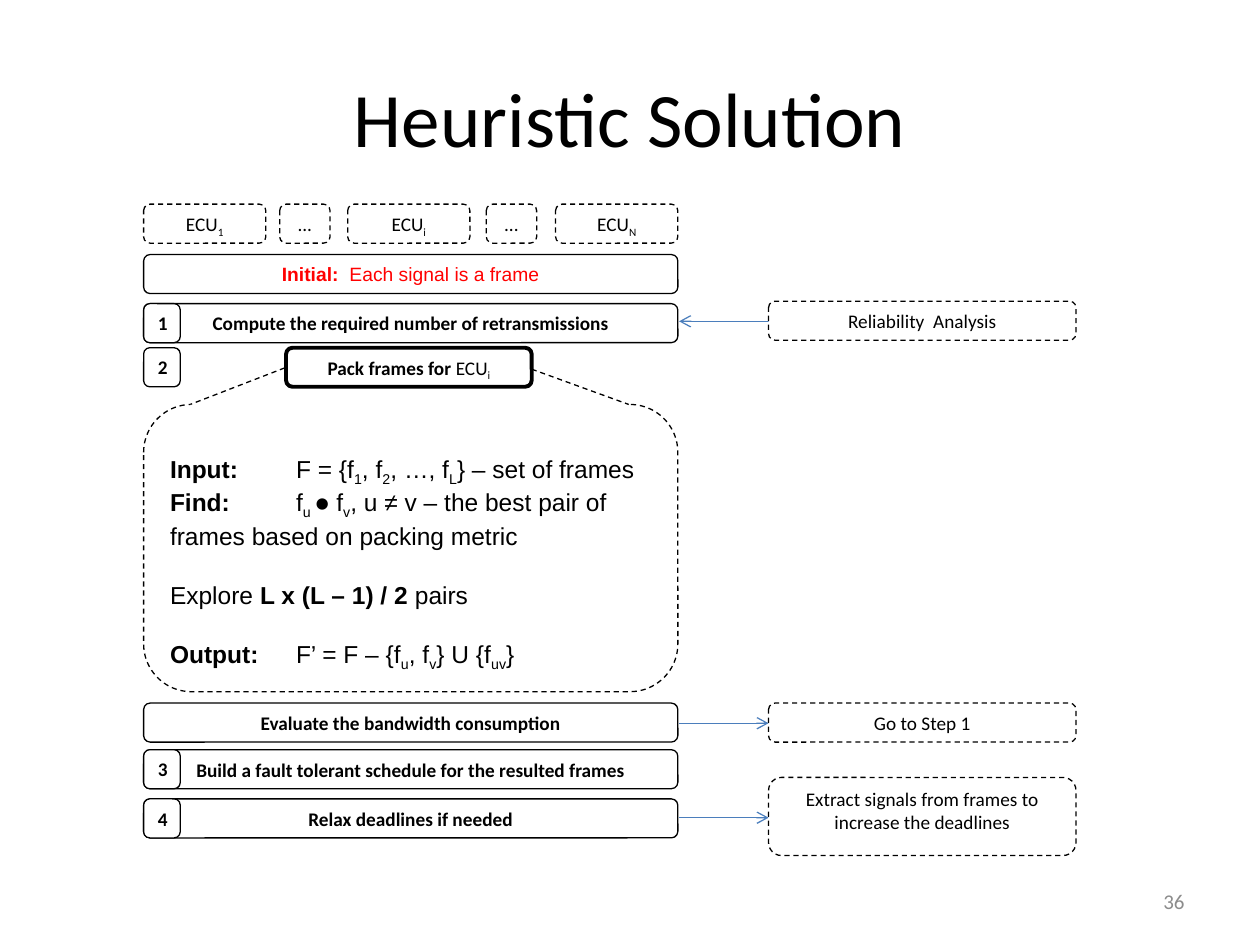
from lxml import etree
from pptx import Presentation
from pptx.dml.color import RGBColor
from pptx.enum.dml import MSO_LINE
from pptx.enum.shapes import MSO_CONNECTOR, MSO_SHAPE
from pptx.enum.text import MSO_ANCHOR, PP_ALIGN
from pptx.oxml.ns import qn
from pptx.util import Inches, Pt

ROUND = MSO_SHAPE.ROUNDED_RECTANGLE
RECT = MSO_SHAPE.RECTANGLE
LINE = MSO_CONNECTOR.STRAIGHT
DASH = MSO_LINE.DASH
TOP, MIDDLE = MSO_ANCHOR.TOP, MSO_ANCHOR.MIDDLE
LEFT, CENTER, RIGHT = PP_ALIGN.LEFT, PP_ALIGN.CENTER, PP_ALIGN.RIGHT
rgb = RGBColor.from_string

deck = Presentation()
deck.slide_width, deck.slide_height = Inches(10), Inches(7.5)
slide = deck.slides.add_slide(deck.slide_layouts[6])
shapes = slide.shapes


def write(frame, lines, size=11, font="Calibri", color="000000", align=CENTER, anchor=TOP):
    frame.word_wrap = True
    frame.vertical_anchor = anchor
    for i, line in enumerate(lines):
        para = frame.paragraphs[0] if i == 0 else frame.add_paragraph()
        para.alignment = align
        for j, chunk in enumerate(line.split("*")):
            for k, part in enumerate(chunk.split("_")):
                if not part:
                    continue
                run = para.add_run()
                run.text = part
                run.font.size = Pt(size)
                run.font.name = "Calibri" if part == "●" else font
                run.font.bold = j % 2 == 1
                run.font.color.rgb = rgb(color)
                if k % 2:
                    run._r.get_or_add_rPr().set("baseline", "-25000")


def box(x, y, w, h=0.31, dash=False, kind=ROUND, line="000000", width=0.75):
    shape = shapes.add_shape(kind, Inches(x), Inches(y), Inches(w), Inches(h))
    shape.shadow.inherit = False
    shape.fill.solid()
    shape.fill.fore_color.rgb = rgb("FFFFFF")
    shape.line.color.rgb = rgb(line)
    shape.line.width = Pt(width)
    if dash:
        shape.line.dash_style = DASH
    return shape


left, wide, side, span = 1.14, 4.24, 6.1, 2.44

labels = [
    (0.5, 0.3, 9, 1.25, "Heuristic Solution", 44, "000000", CENTER),
    (7.17, 6.95, 2.33, 0.4, "36", 12, "8C8C8C", RIGHT),
]
for x, y, w, h, text, size, color, align in labels:
    label = shapes.add_textbox(Inches(x), Inches(y), Inches(w), Inches(h))
    write(label.text_frame, [text], size, color=color, align=align, anchor=MIDDLE)

detail = box(left, 3.21, wide, 2.28, dash=True).text_frame
detail.margin_top = Inches(0.28)
write(detail, [
    "*Input:\t*F = {f_1_, f_2_, …, f_L_} – set of frames",
    "*Find: \t*f_u _●__ f_v_, u ≠ v – the best pair of frames based on packing metric",
    "Explore* L x (L – 1) / 2* pairs",
    "*Output:*\tF’ = F – {f_u_, f_v_} U {f_uv_}",
], 14, "Arial", align=LEFT)
for para in detail.paragraphs[2:]:
    para.space_before = Pt(17)
box(1.51, 3.16, 3.48, 0.1, kind=RECT, line="FFFFFF")

units = [(1.14, 0.97, "ECU_1_"), (2.22, 0.4, "..."), (2.76, 0.97, "ECU_i_"),
         (3.86, 0.4, "..."), (4.41, 0.97, "ECU_N_")]
for x, w, text in units:
    write(box(x, 1.62, w, dash=True).text_frame, [text])

links = [
    (2.26, 2.92, 1.51, 3.21, False),
    (4.22, 2.93, 4.99, 3.21, False),
    (side, 2.55, 5.39, 2.55, True),
    (5.39, 5.74, side, 5.74, True),
    (5.39, 6.49, side, 6.49, True),
]
for x, y, end, base, arrow in links:
    link = shapes.add_connector(LINE, Inches(x), Inches(y), Inches(end), Inches(base))
    link.line.width = Pt(0.75)
    link.line.color.rgb = rgb("4B7EBC" if arrow else "000000")
    if arrow:
        etree.SubElement(link.line._get_or_add_ln(), qn("a:tailEnd"), type="arrow")
    else:
        link.line.dash_style = DASH
    etree.SubElement(link._element.spPr, qn("a:effectLst"))

write(box(left, 2.02, wide).text_frame, ["*Initial:*  Each signal is a frame"],
      font="Arial", color="FF0000")

steps = [
    (2.41, "Compute the required number of retransmissions"),
    (5.58, "Evaluate the bandwidth consumption"),
    (5.95, "Build a fault tolerant schedule for the resulted frames"),
    (6.34, "Relax deadlines if needed"),
]
for y, text in steps:
    write(box(left, y, wide).text_frame, [f"*{text}*"])
write(box(2.27, 2.76, 1.95, width=2.25).text_frame, ["*Pack frames for *ECU_i_"])

for i, y in enumerate([2.41, 2.76, 5.95, 6.34], 1):
    write(box(left, y, 0.29).text_frame, [f"*{i}*"])

notes = [
    (2.39, 0.31, "Reliability  Analysis"),
    (5.58, 0.31, "Go to Step 1"),
    (6.17, 0.62, "Extract signals from frames to increase the deadlines"),
]
for y, h, text in notes:
    write(box(side, y, span, h, dash=True).text_frame, [text])

deck.save("out.pptx")
